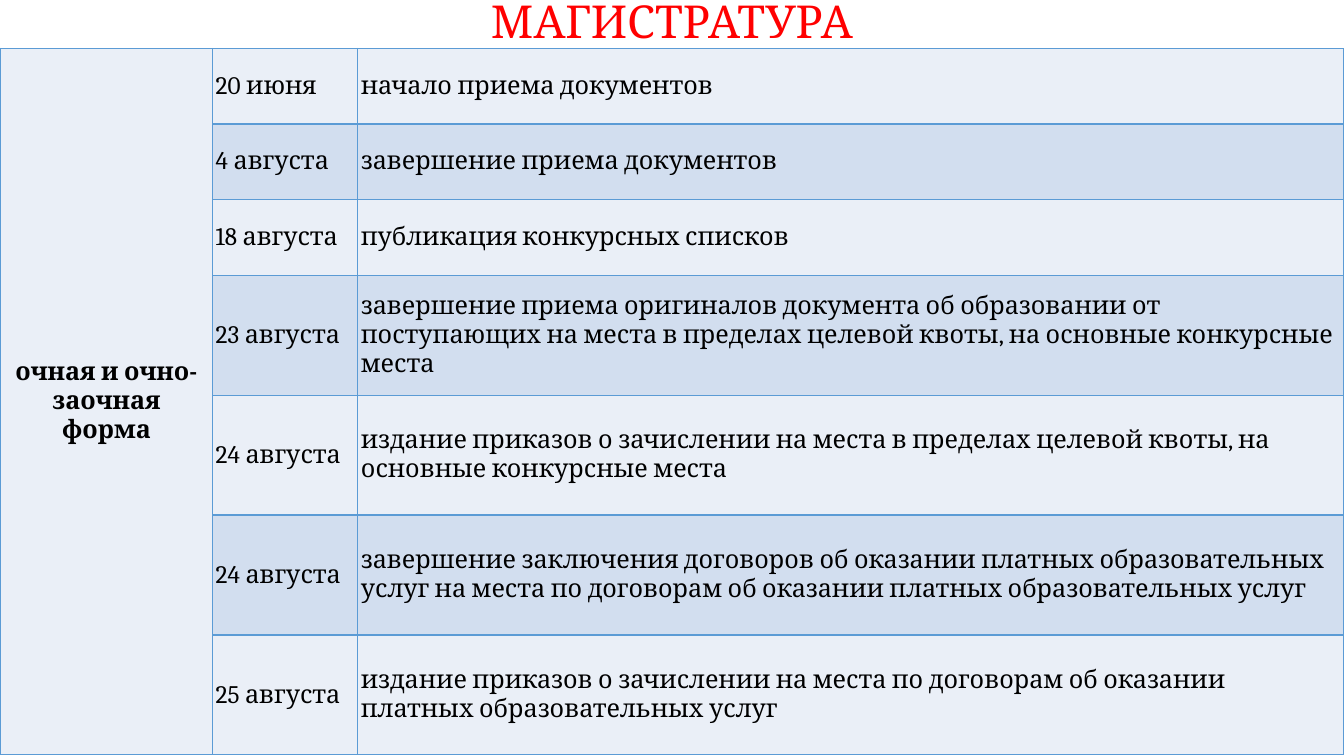
import dataclasses

import lxml.etree
import pptx
import pptx.dml.color
import pptx.enum.text
import pptx.oxml.ns
import pptx.slide
import pptx.table
import pptx.text.text
import pptx.util

SCALE = 9144
WIDE, HIGH = 1333, 750
HEAD = 48
COLS = [211, 144, 978]
SHORT, TALL = 75, 119
FONT = "Cambria"
RED = pptx.dml.color.RGBColor(0xFF, 0x00, 0x00)
BLACK = pptx.dml.color.RGBColor(0x00, 0x00, 0x00)
BLUE = pptx.dml.color.RGBColor(0x5B, 0x9B, 0xD5)
BANDS = [
    pptx.dml.color.RGBColor(0xEA, 0xEF, 0xF7),
    pptx.dml.color.RGBColor(0xD2, 0xDE, 0xEF),
]
ALIGN = pptx.enum.text.PP_ALIGN
MIDDLE = pptx.enum.text.MSO_ANCHOR.MIDDLE


@dataclasses.dataclass
class Event:
    date: str
    text: str
    high: int


EVENTS = [
    Event("20 июня", "начало приема документов", SHORT),
    Event("4 августа", "завершение приема документов", SHORT),
    Event("18 августа", "публикация конкурсных списков", SHORT),
    Event("23 августа", "завершение приема оригиналов документа об образовании от поступающих "
          "на места в пределах целевой квоты, на основные конкурсные места", TALL),
    Event("24 августа", "издание приказов о зачислении на места в пределах целевой квоты, "
          "на основные конкурсные места", TALL),
    Event("24 августа", "завершение заключения договоров об оказании платных образовательных "
          "услуг на места по договорам об оказании платных образовательных услуг", TALL),
    Event("25 августа", "издание приказов о зачислении на места по договорам об оказании "
          "платных образовательных услуг", TALL),
]


def px(size: int) -> pptx.util.Emu:
    return pptx.util.Emu(size * SCALE)


def write(frame: pptx.text.text.TextFrame, text: str, *, size: float = 18,
          color: pptx.dml.color.RGBColor = BLACK, bold: bool = False,
          align: ALIGN = ALIGN.LEFT, space: float = 1.0) -> None:
    frame.word_wrap = True
    line = frame.paragraphs[0]
    line.alignment = align
    line.line_spacing = space
    run = line.add_run()
    run.text = text
    run.font.name = FONT
    run.font.size = pptx.util.Pt(size)
    run.font.bold = bold
    run.font.color.rgb = color


def style(cell: pptx.table._Cell, fill: pptx.dml.color.RGBColor) -> None:
    cell.vertical_anchor = MIDDLE
    cell.fill.solid()
    cell.fill.fore_color.rgb = fill
    name = pptx.oxml.ns.qn
    props = cell._tc.get_or_add_tcPr()
    for spot, side in enumerate(["a:lnL", "a:lnR", "a:lnT", "a:lnB"]):
        edge = lxml.etree.Element(name(side), w=str(pptx.util.Pt(1)))
        solid = lxml.etree.SubElement(edge, name("a:solidFill"))
        lxml.etree.SubElement(solid, name("a:srgbClr"), val=str(BLUE))
        props.insert(spot, edge)


def add_title(slide: pptx.slide.Slide) -> None:
    title = slide.shapes.title
    title.left, title.top, title.width, title.height = px(0), px(0), px(WIDE), px(HEAD)
    frame = title.text_frame
    frame.auto_size = pptx.enum.text.MSO_AUTO_SIZE.NONE
    frame.vertical_anchor = MIDDLE
    write(frame, "МАГИСТРАТУРА", size=32.4, color=RED, align=ALIGN.CENTER, space=0.9)


def add_dates(slide: pptx.slide.Slide) -> None:
    total = sum(event.high for event in EVENTS)
    table = slide.shapes.add_table(
        len(EVENTS), len(COLS), px(0), px(HEAD), px(WIDE), px(total)).table
    table.first_row = False
    for col, wide in zip(table.columns, COLS):
        col.width = px(wide)
    for row, event in enumerate(EVENTS):
        table.rows[row].height = px(event.high)
        style(table.cell(row, 0), BANDS[0])
        for col, text in enumerate([event.date, event.text], start=1):
            cell = table.cell(row, col)
            style(cell, BANDS[row % 2])
            cell.margin_left = cell.margin_right = px(3)
            cell.margin_top = cell.margin_bottom = px(10)
            write(cell.text_frame, text)
    form = table.cell(0, 0)
    form.merge(table.cell(len(EVENTS) - 1, 0))
    write(form.text_frame, "очная и очно-заочная форма", bold=True, align=ALIGN.CENTER)


def main() -> None:
    deck = pptx.Presentation()
    deck.slide_width, deck.slide_height = px(WIDE), px(HIGH)
    slide = deck.slides.add_slide(deck.slide_layouts.get_by_name("Title Only"))
    add_title(slide)
    add_dates(slide)
    deck.save("out.pptx")


if __name__ == "__main__":
    main()
